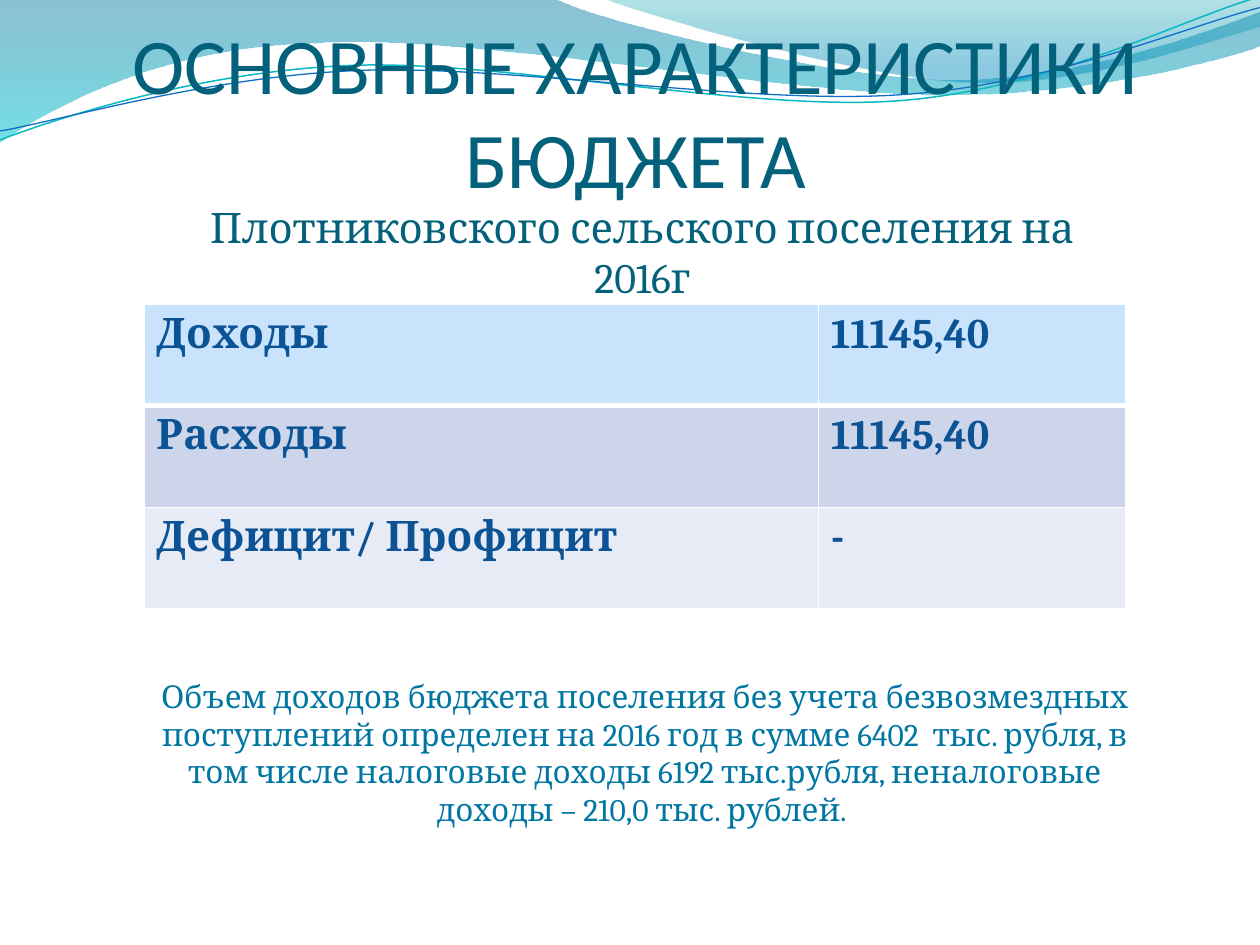
import math

from lxml import etree
from pptx import Presentation
from pptx import util as u
from pptx.dml.color import RGBColor
from pptx.enum import text as t
from pptx.oxml import ns

HUE = dict(title="04617B", cell="0B5394", note="0076A3", white="FFFFFF",
           deep="0074A1", aqua="00C6CF", teal="00A1A9", sky="008BBF",
           cyan="0AB8BF", blue="0F6FC6",
           head="C8E3FB", band="CCD5EA", pale="E7EBF5")
UNIT = u.Cm(0.0254)  # waves are drawn in thousandths of the slide width
TILT = 2.7           # degrees by which the thin lines are turned
PIVOT = (499, 58)

# Each wave: start point, then (x, y) for a line or (x1, y1, x2, y2, x, y) for a curve
FILLED = [
    ([(0, 0), (440, -1), (476, 17, 664, 63, 758, 63),
      (853, 63, 958, 26, 1000, 9), (1001, 36),
      (983, 44, 870, 76, 746, 75), (622, 75, 382, 28, 257, 34),
      (129, 36, 46, 83, -1, 113)],
     [(0, "deep", 45), (1, "aqua", 55)]),
    ([(479, -1), (509, 11, 682, 62, 769, 65),
      (856, 69, 961, 32, 1000, 21), (1000, 0)],
     [(0, "teal", 30), (0.8, "sky", 45)]),
]
LINES = [
    ([(0, 111), (48, 93, 158, 57, 277, 52), (395, 47, 593, 89, 713, 80),
      (833, 71, 938, 15, 998, -2)], "cyan", 0.85),
    ([(0, 104), (47, 96, 164, 61, 283, 56), (403, 51, 597, 84, 717, 75),
      (836, 67, 941, 21, 1000, 6)], "blue", 0.75),
]


def rgb(name):
    return RGBColor.from_string(HUE[name])


def pairs(node):
    return list(zip(node[::2], node[1::2]))


def turn(node):
    """Rotate the points of a node about the pivot, against the tilt."""
    sin, cos = math.sin(math.radians(TILT)), math.cos(math.radians(TILT))
    out = []
    for x, y in pairs(node):
        dx, dy = x - PIVOT[0], y - PIVOT[1]
        out += [PIVOT[0] + dx * cos - dy * sin, PIVOT[1] + dx * sin + dy * cos]
    return tuple(out)


def wave(sl, box, nodes, close):
    spots = [[(round(box[0] + x * UNIT), round(box[1] + y * UNIT))
              for x, y in pairs(node)] for node in nodes]
    pen = sl.shapes.build_freeform(*spots[0][0])
    pen.add_line_segments([s[-1] for s in spots[1:]], close=close)
    shp = pen.convert_to_shape()
    shp.shadow.inherit = False
    # Bend the segments that have control points
    segs = list(shp._element.iter(ns.qn("a:lnTo")))
    for seg, spot in zip(segs, spots[1:]):
        if len(spot) == 3:
            bend = etree.Element(ns.qn("a:cubicBezTo"))
            for x, y in spot:
                etree.SubElement(bend, ns.qn("a:pt"),
                                 x=str(x - shp.left), y=str(y - shp.top))
            seg.getparent().replace(seg, bend)
    return shp


def waves(sl, box):
    for nodes, stops in FILLED:
        shp = wave(sl, box, nodes, True)
        shp.line.fill.background()
        shp.fill.gradient()
        shp.fill.gradient_angle = 270
        for stop, (pos, name, _) in zip(shp.fill.gradient_stops, stops):
            stop.position = pos
            stop.color.rgb = rgb(name)
        tags = list(shp._element.spPr.iter(ns.qn("a:srgbClr")))
        for tag, (_, _, alpha) in zip(tags, stops):
            etree.SubElement(tag, ns.qn("a:alpha"), val=str(alpha * 1000))
    for nodes, name, width in LINES:
        shp = wave(sl, box, [turn(node) for node in nodes], False)
        shp.rotation = 360 - TILT
        shp.fill.background()
        shp.line.color.rgb = rgb(name)
        shp.line.width = u.Pt(width)


def write(frame, words, hue, **font):
    par = frame.paragraphs[0]
    run = par.add_run()
    run.text = words
    run.font.color.rgb = rgb(hue)
    for key, val in font.items():
        setattr(run.font, key, val)
    return par


def label(sl, box, words, hue, font, frame):
    tf = sl.shapes.add_textbox(*box).text_frame
    for key, val in dict(word_wrap=True, **frame).items():
        setattr(tf, key, val)
    write(tf, words, hue, **font).alignment = t.PP_ALIGN.CENTER


def edge(cell, side, width):
    ln = etree.SubElement(cell._tc.get_or_add_tcPr(), ns.qn("a:ln" + side),
                          w=str(u.Pt(width)))
    fill = etree.SubElement(ln, ns.qn("a:solidFill"))
    etree.SubElement(fill, ns.qn("a:srgbClr"), val=HUE["white"])


def budget(sl, box):
    rows = [("head", "Доходы", "11145,40"),
            ("band", "Расходы", "11145,40"),
            ("pale", "Дефицит/ Профицит", "-")]
    tbl = sl.shapes.add_table(len(rows), 2, *box).table
    tbl.columns[0].width = u.Cm(13.6)
    tbl.columns[1].width = box[2] - u.Cm(13.6)
    for r, (fill, *words) in enumerate(rows):
        for c, word in enumerate(words):
            cell = tbl.cell(r, c)
            for side in "LRTB":
                thick = (r, side) in ((0, "B"), (1, "T"))
                edge(cell, side, 3 if thick else 1)
            cell.fill.solid()
            cell.fill.fore_color.rgb = rgb(fill)
            write(cell.text_frame, word, "cell", name="Cambria",
                  size=u.Pt(24), bold=True)


def main():
    prs = Presentation()
    prs.slide_width, prs.slide_height = u.Cm(25.4), u.Cm(19.05)
    sl = prs.slides.add_slide(prs.slide_layouts[6])
    grow = dict(auto_size=t.MSO_AUTO_SIZE.SHAPE_TO_FIT_TEXT)

    # Wavy header
    waves(sl, (u.Cm(0), u.Cm(0)))

    # Title, table, subtitle and note
    label(sl, (u.Cm(1.28), u.Cm(1.96), u.Cm(23.06), u.Cm(2.16)),
          "ОСНОВНЫЕ ХАРАКТЕРИСТИКИ БЮДЖЕТА", "title",
          dict(name="Calibri", size=u.Pt(45)),
          dict(vertical_anchor=t.MSO_ANCHOR.BOTTOM, margin_left=0,
               margin_right=0, margin_bottom=0))
    budget(sl, (u.Cm(2.9), u.Cm(6.13), u.Cm(19.8), u.Cm(6.15)))
    label(sl, (u.Cm(3.7), u.Cm(3.93), u.Cm(18.5), u.Cm(1.27)),
          "Плотниковского сельского поселения на 2016г", "title",
          dict(name="Cambria", size=u.Pt(24)), grow)
    label(sl, (u.Cm(2.9), u.Cm(13.52), u.Cm(20.2), u.Cm(3.33)),
          "Объем доходов бюджета поселения без учета безвозмездных поступлений "
          "определен на 2016 год в сумме 6402  тыс. рубля, в том числе налоговые "
          "доходы 6192 тыс.рубля, неналоговые доходы – 210,0 тыс. рублей. ", "note",
          dict(name="Cambria", size=u.Pt(18)), grow)
    prs.save("out.pptx")


if __name__ == "__main__":
    main()
